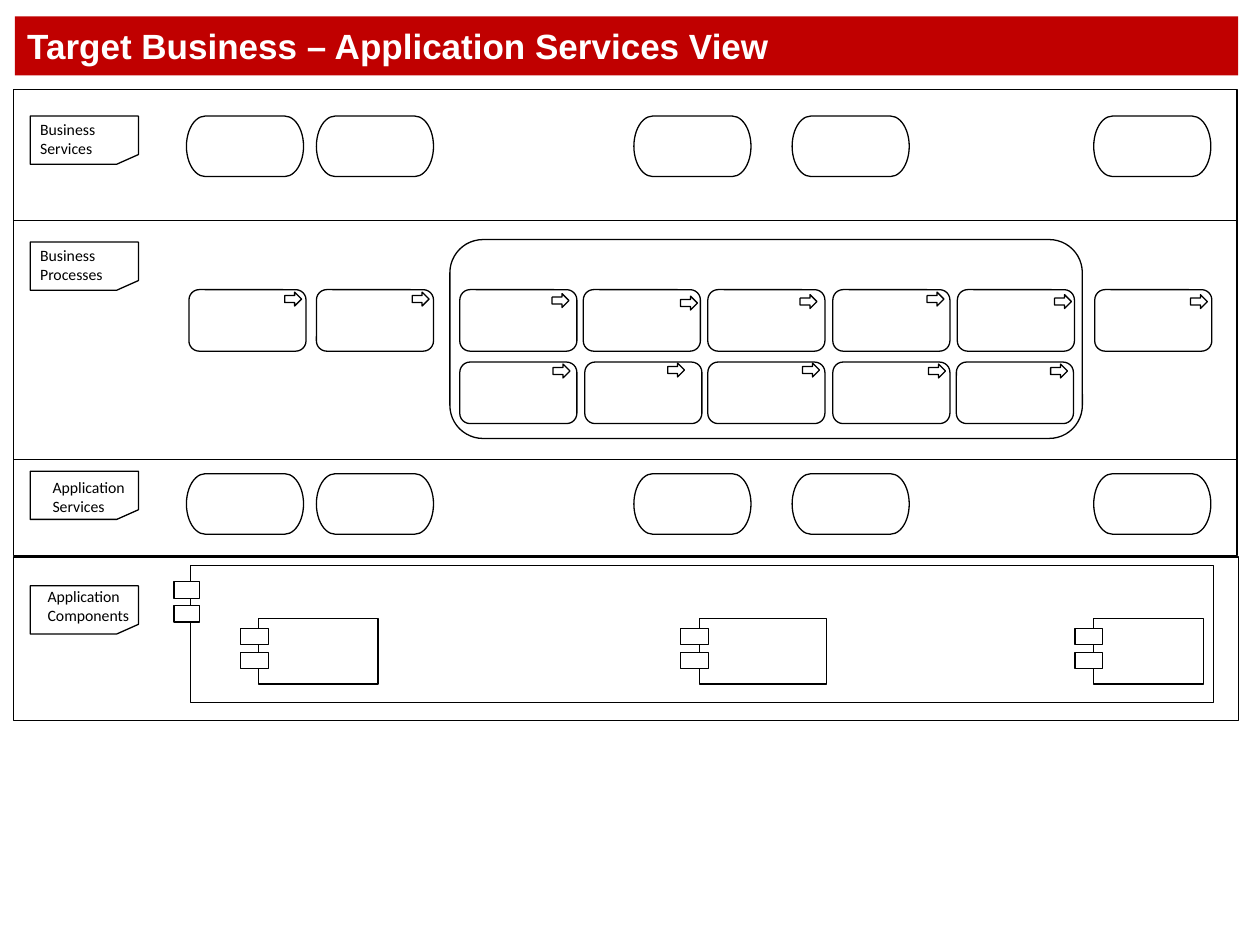
from pptx import Presentation
from pptx.dml.color import RGBColor
from pptx.enum.shapes import MSO_SHAPE
from pptx.enum.text import MSO_ANCHOR, PP_ALIGN
from pptx.util import Cm, Pt

RECTANGLE = MSO_SHAPE.RECTANGLE
ROUNDED = MSO_SHAPE.ROUNDED_RECTANGLE
TERMINATOR = MSO_SHAPE.FLOWCHART_TERMINATOR
ARROW = MSO_SHAPE.RIGHT_ARROW
CARD = MSO_SHAPE.FLOWCHART_CARD
LEFT = PP_ALIGN.LEFT
MIDDLE = MSO_ANCHOR.MIDDLE

RED = RGBColor(0xC0, 0x00, 0x00)
WHITE = RGBColor(0xFF, 0xFF, 0xFF)
BLACK = RGBColor(0x00, 0x00, 0x00)

# Content; all lengths are in centimetres
TITLE = "Target Business – Application Services View"

# Bands from back to front: top, width, height
BANDS = [
    (11.23, 24.69, 3.3),
    (9.27, 24.66, 1.93),
    (4.37, 24.66, 4.9),
    (1.8, 24.66, 2.64),
]

# Band labels: lines, card top, text left, text top
LABELS = [
    (("Business", "Services"), 2.34, 0.56, 2.29),
    (("Business", "Processes"), 4.88, 0.56, 4.83),
    (("Application", "Services"), 9.5, 0.81, 9.5),
    (("Application", "Components"), 11.81, 0.71, 11.71),
]

SERVICE_LEFTS = [3.76, 6.38, 12.78, 15.97, 22.05]
SERVICE_TOPS = [2.34, 9.55]
SERVICE_SIZE = (2.36, 1.22)

# Process rows: top, then (box left, arrow left, arrow top) for each process
PROCESS_ROWS = [
    (5.84, [(3.81, 5.74, 5.89), (6.38, 8.31, 5.89), (9.27, 11.13, 5.92),
            (11.76, 13.72, 5.97), (14.27, 16.13, 5.94), (16.79, 18.69, 5.89),
            (19.3, 21.26, 5.94), (22.07, 24, 5.94)]),
    (7.3, [(9.27, 11.15, 7.34), (11.79, 13.46, 7.32), (14.27, 16.18, 7.32),
           (16.79, 18.72, 7.34), (19.28, 21.18, 7.34)]),
]
PROCESS_SIZE = (2.36, 1.24)
ARROW_SIZE = (0.34, 0.28)
PROCESS_GROUP = (9.07, 4.83, 12.75, 4.01)

# Components: body box, then left, top and width of the upper tab
COMPONENTS = [
    ((3.84, 11.4, 20.62, 2.77), (3.51, 11.73, 0.51)),
    ((5.21, 12.47, 2.41, 1.32), (4.85, 12.67, 0.56)),
    ((14.1, 12.47, 2.57, 1.32), (13.72, 12.67, 0.56)),
    ((22.05, 12.47, 2.21, 1.32), (21.67, 12.67, 0.56)),
]
TAB_HEIGHT = 0.33
TAB_STEP = 0.48

presentation = Presentation()
presentation.slide_width = Cm(25.4)
presentation.slide_height = Cm(19.05)
slide = presentation.slides.add_slide(presentation.slide_layouts[6])


def add_box(kind, left, top, width, height, fill=None, line=BLACK):
    shape = slide.shapes.add_shape(
        kind, Cm(left), Cm(top), Cm(width), Cm(height))
    shape.shadow.inherit = False
    if fill is None:
        shape.fill.background()
    else:
        shape.fill.solid()
        shape.fill.fore_color.rgb = fill
    if line is None:
        shape.line.fill.background()
    else:
        shape.line.color.rgb = line
        shape.line.width = Pt(0.75)
    return shape


def style(paragraph, name, size, color, bold=False):
    paragraph.alignment = LEFT
    paragraph.font.name = name
    paragraph.font.size = Pt(size)
    paragraph.font.bold = bold
    paragraph.font.color.rgb = color


# Title bar
title = add_box(RECTANGLE, 0.3, 0.33, 24.66, 1.19, RED, None)
title.text_frame.text = TITLE
title.text_frame.vertical_anchor = MIDDLE
style(title.text_frame.paragraphs[0], "Arial", 20, WHITE, True)

# Bands
for top, width, height in BANDS:
    add_box(RECTANGLE, 0.28, top, width, height, WHITE)

# Business and application services
for top in SERVICE_TOPS:
    for left in SERVICE_LEFTS:
        add_box(TERMINATOR, left, top, *SERVICE_SIZE)

# Business processes
add_box(ROUNDED, *PROCESS_GROUP)
for top, processes in PROCESS_ROWS:
    for left, arrow_left, arrow_top in processes:
        add_box(ROUNDED, left, top, *PROCESS_SIZE)
        add_box(ARROW, arrow_left, arrow_top, *ARROW_SIZE)

# Application components with two tabs each
for body, (left, top, width) in COMPONENTS:
    add_box(RECTANGLE, *body)
    for index in range(2):
        add_box(RECTANGLE, left, top + index * TAB_STEP,
                width, TAB_HEIGHT, WHITE)

# Band labels
for lines, card_top, text_left, text_top in LABELS:
    card = add_box(CARD, 0.61, card_top, 2.18, 0.97, WHITE)
    card.rotation = 180
    text_box = slide.shapes.add_textbox(
        Cm(text_left), Cm(text_top), Cm(2.18), Cm(1.02))
    text_box.text_frame.word_wrap = True
    text_box.text_frame.text = "\n".join(lines)
    for paragraph in text_box.text_frame.paragraphs:
        style(paragraph, "Calibri", 9, BLACK)

presentation.save("out.pptx")
